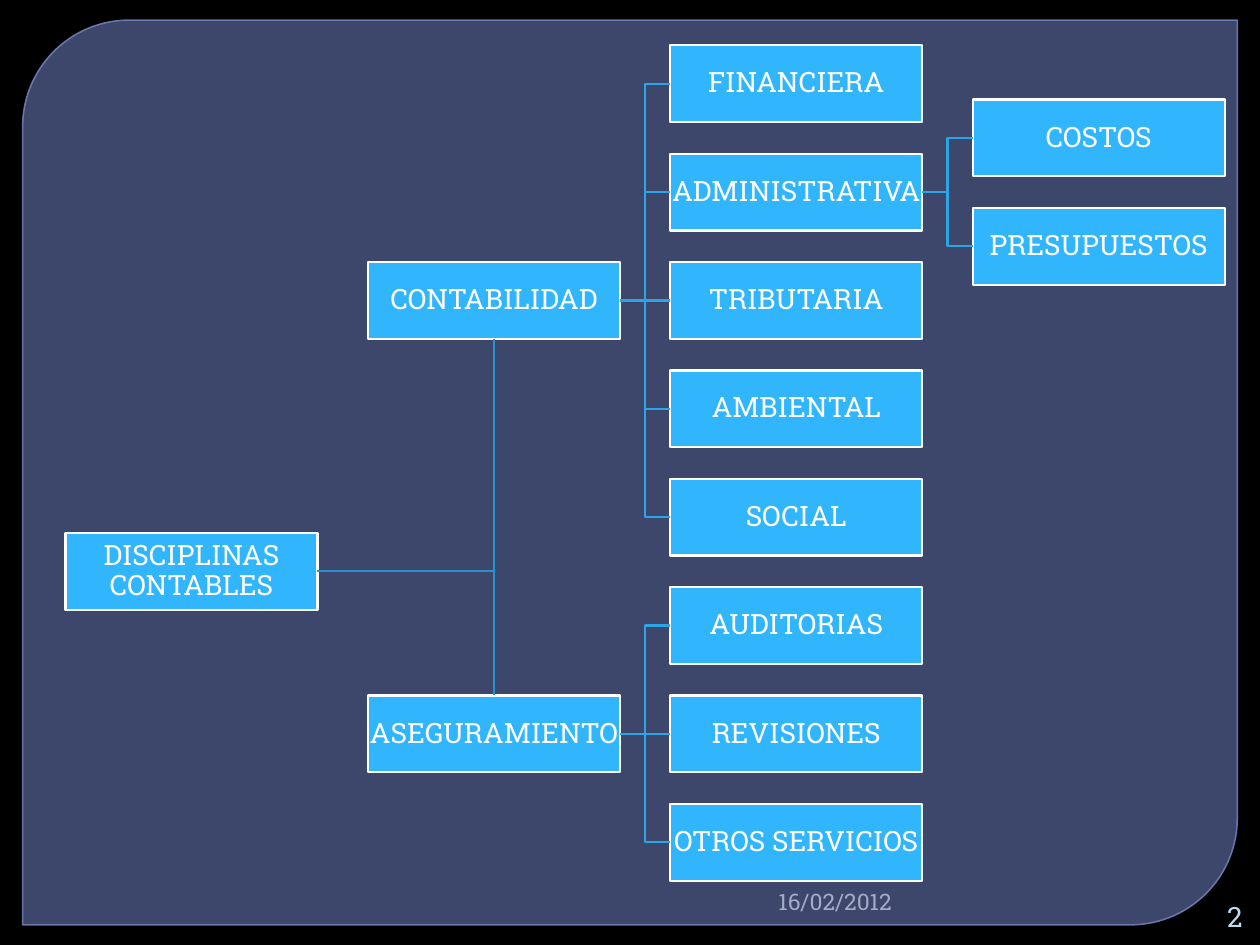
"""Build a slide with the tree of accounting disciplines."""
from lxml.etree import SubElement
from pptx import Presentation
from pptx.dml.color import RGBColor
from pptx.enum.shapes import MSO_CONNECTOR, MSO_SHAPE
from pptx.enum.text import MSO_ANCHOR, PP_ALIGN
from pptx.oxml.ns import qn
from pptx.util import Inches, Pt

ROOT, ACCOUNTING, ASSURANCE = "DISCIPLINAS CONTABLES", "CONTABILIDAD", "ASEGURAMIENTO"
MANAGEMENT = "ADMINISTRATIVA"
BOXES = {
    ROOT: (0, 4.5),
    ACCOUNTING: (1, 2),
    ASSURANCE: (1, 6),
    "FINANCIERA": (2, 0),
    MANAGEMENT: (2, 1),
    "TRIBUTARIA": (2, 2),
    "AMBIENTAL": (2, 3),
    "SOCIAL": (2, 4),
    "AUDITORIAS": (2, 5),
    "REVISIONES": (2, 6),
    "OTROS SERVICIOS": (2, 7),
    "COSTOS": (3, 0.5),
    "PRESUPUESTOS": (3, 1.5),
}
BRANCHES = {
    ACCOUNTING: ["FINANCIERA", MANAGEMENT, "TRIBUTARIA", "AMBIENTAL", "SOCIAL"],
    ASSURANCE: ["AUDITORIAS", "REVISIONES", "OTROS SERVICIOS"],
    MANAGEMENT: ["COSTOS", "PRESUPUESTOS"],
}
DATE, PAGE_NUMBER = "16/02/2012", "2"

COLORS = {
    "background": "000000", "panel": "5F6DA5", "panel_line": "7482BB",
    "box": "31B6FD", "white": "FFFFFF", "trunk": "2792CB", "branch": "2CA5E6",
    "date": "A5ABC9", "page": "BDDDF1",
}
FONT = "Roboto Slab"
GRID_LEFT, GRID_TOP, COLUMN_STEP, ROW_STEP = 0.52, 0.36, 2.4, 0.86
BOX_WIDTH, BOX_HEIGHT = 2, 0.61
LINE_WIDTH = 1.25
TOP, RIGHT, BOTTOM, LEFT = 0, 3, 2, 1


def rgb(name):
    return RGBColor.from_string(COLORS[name])


def set_alpha(color_format_parent, percent):
    color = next(color_format_parent.iter(qn("a:srgbClr")))
    SubElement(color, qn("a:alpha")).set("val", str(percent * 1000))


def style_shape(shape, fill, line, width):
    shape.shadow.inherit = False
    shape.fill.solid()
    shape.fill.fore_color.rgb = rgb(fill)
    shape.line.color.rgb = rgb(line)
    shape.line.width = Pt(width)


def write_text(shape, text, size=16, color="white", align=PP_ALIGN.CENTER,
               anchor=MSO_ANCHOR.MIDDLE, inset=None, spacing=None):
    frame = shape.text_frame
    frame.word_wrap = True
    frame.vertical_anchor = anchor
    if inset is not None:
        frame.margin_left = frame.margin_right = Inches(inset)
        frame.margin_top = frame.margin_bottom = Inches(inset)
    paragraph = frame.paragraphs[0]
    paragraph.alignment = align
    paragraph.line_spacing = spacing
    run = paragraph.add_run()
    run.text = text
    run.font.name = FONT
    run.font.size = Pt(size)
    run.font.color.rgb = rgb(color)


def add_panel(slide):
    panel = slide.shapes.add_shape(MSO_SHAPE.ROUND_2_DIAG_RECTANGLE, Inches(0.18),
                                   Inches(0.16), Inches(9.64), Inches(7.18))
    panel.adjustments[0], panel.adjustments[1] = 0.118, 0
    style_shape(panel, "panel", "panel_line", 0.87)
    properties = panel.element.spPr
    set_alpha(properties.find(qn("a:solidFill")), 65)
    set_alpha(properties.find(qn("a:ln")), 88)


def add_box(slide, text, column, row):
    box = slide.shapes.add_shape(
        MSO_SHAPE.RECTANGLE, Inches(GRID_LEFT + column * COLUMN_STEP),
        Inches(GRID_TOP + row * ROW_STEP), Inches(BOX_WIDTH), Inches(BOX_HEIGHT))
    style_shape(box, "box", "white", LINE_WIDTH)
    write_text(box, text, inset=0.01, spacing=0.9)
    return box


def add_line(slide, kind, color, start, start_side, end=None, end_side=None, point=(0, 0)):
    connector = slide.shapes.add_connector(kind, 0, 0, *point)
    connector.begin_connect(start, start_side)
    if end is not None:
        connector.end_connect(end, end_side)
    connector.line.color.rgb = rgb(color)
    connector.line.width = Pt(LINE_WIDTH)
    SubElement(connector.element.spPr, qn("a:effectLst"))


def add_label(slide, text, left, top, width, **text_format):
    label = slide.shapes.add_textbox(Inches(left), Inches(top), Inches(width), Inches(0.3))
    write_text(label, text, **text_format)


def main():
    presentation = Presentation()
    presentation.slide_width, presentation.slide_height = Inches(10), Inches(7.5)
    slide = presentation.slides.add_slide(presentation.slide_layouts[6])
    slide.background.fill.solid()
    slide.background.fill.fore_color.rgb = rgb("background")

    add_panel(slide)
    boxes = {text: add_box(slide, text, *cell) for text, cell in BOXES.items()}

    root, accounting = boxes[ROOT], boxes[ACCOUNTING]
    junction = (accounting.left + accounting.width // 2, root.top + root.height // 2)
    add_line(slide, MSO_CONNECTOR.STRAIGHT, "trunk", accounting, BOTTOM, boxes[ASSURANCE], TOP)
    add_line(slide, MSO_CONNECTOR.STRAIGHT, "trunk", root, RIGHT, point=junction)
    for parent, children in BRANCHES.items():
        for child in children:
            level = BOXES[parent][1] == BOXES[child][1]
            kind = MSO_CONNECTOR.STRAIGHT if level else MSO_CONNECTOR.ELBOW
            add_line(slide, kind, "branch", boxes[parent], RIGHT, boxes[child], LEFT)

    add_label(slide, DATE, 6.08, 7, 3.28, size=13, color="date",
              align=PP_ALIGN.LEFT, anchor=MSO_ANCHOR.TOP)
    add_label(slide, PAGE_NUMBER, 9.45, 7.12, 0.51, color="page", align=PP_ALIGN.RIGHT)
    presentation.save("out.pptx")


if __name__ == "__main__":
    main()
